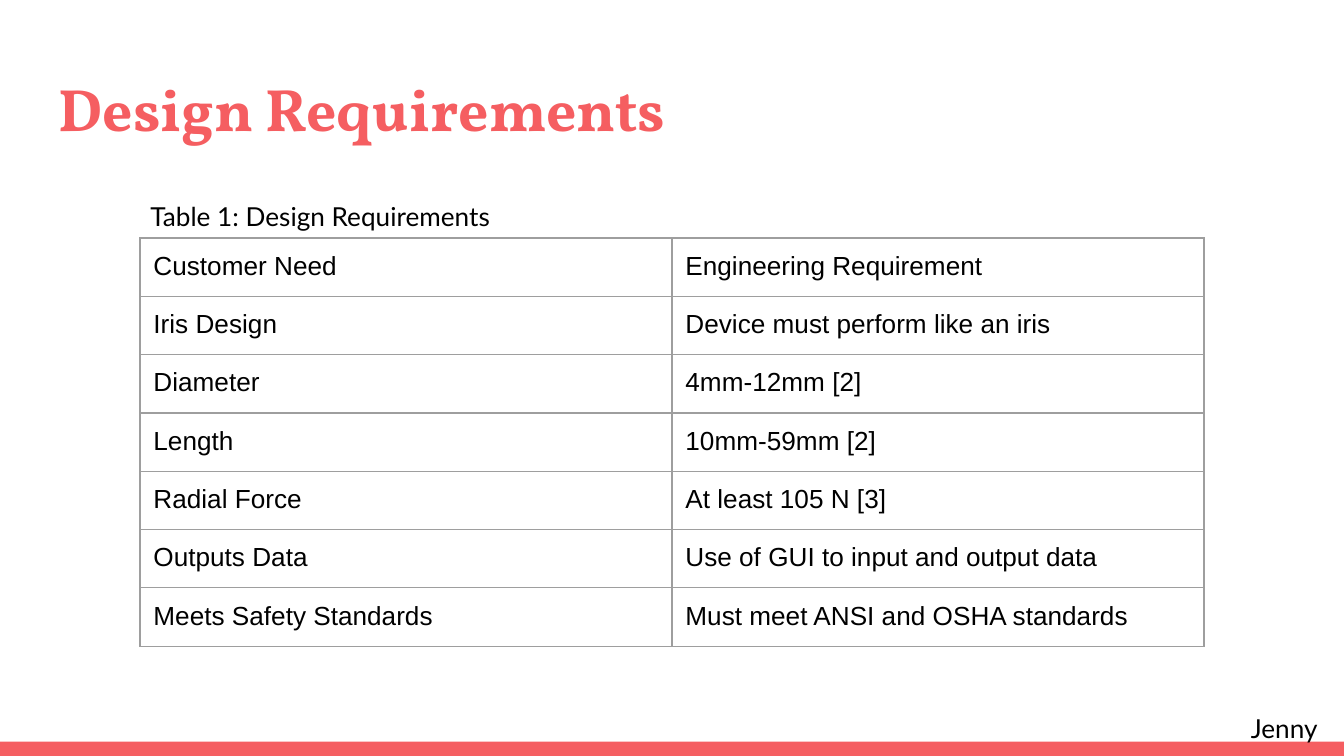
"""Build the Design Requirements slide with its table of customer needs."""
from dataclasses import dataclass

import lxml.etree
import pptx
import pptx.dml.color
import pptx.enum.shapes
import pptx.oxml.ns
import pptx.util

Pt = pptx.util.Pt


@dataclass(frozen=True)
class Theme:
    accent: str = "F55E61"
    text: str = "000000"
    border: str = "9E9E9E"
    title_font: str = "Vollkorn"
    body_font: str = "Lato"
    table_font: str = "Arial"
    title_size: int = 32
    body_size: int = 14
    border_width: float = 0.75
    inset: float = 7.2


THEME = Theme()
SLIDE_WIDTH, SLIDE_HEIGHT = 720, 405
BAR_HEIGHT = 7.6
COLUMN_WIDTH, ROW_HEIGHT = 285, 30.2
REQUIREMENTS = [
    ("Customer Need", "Engineering Requirement"),
    ("Iris Design", "Device must perform like an iris"),
    ("Diameter", "4mm-12mm [2]"),
    ("Length", "10mm-59mm [2]"),
    ("Radial Force", "At least 105 N [3]"),
    ("Outputs Data", "Use of GUI to input and output data"),
    ("Meets Safety Standards", "Must meet ANSI and OSHA standards"),
]


def rgb(color):
    return pptx.dml.color.RGBColor.from_string(color)


def set_margins(target):
    for side in ("left", "top", "right", "bottom"):
        setattr(target, f"margin_{side}", Pt(THEME.inset))


def write(text_frame, text, font_name, size, color, bold=False):
    text_frame.text = text
    font = text_frame.paragraphs[0].runs[0].font
    font.name, font.size, font.bold = font_name, Pt(size), bold
    font.color.rgb = rgb(color)


def add_bar(slide):
    bar = slide.shapes.add_shape(
        pptx.enum.shapes.MSO_SHAPE.RECTANGLE,
        Pt(0), Pt(SLIDE_HEIGHT - BAR_HEIGHT), Pt(SLIDE_WIDTH), Pt(BAR_HEIGHT))
    bar.shadow.inherit = False
    bar.fill.solid()
    bar.fill.fore_color.rgb = rgb(THEME.accent)
    bar.line.fill.background()


def add_text(slide, box, text, font_name=THEME.body_font,
             size=THEME.body_size, color=THEME.text, bold=False):
    text_frame = slide.shapes.add_textbox(*map(Pt, box)).text_frame
    text_frame.word_wrap = True
    set_margins(text_frame)
    write(text_frame, text, font_name, size, color, bold)


def add_borders(cell):
    properties = cell._tc.get_or_add_tcPr()
    qn = pptx.oxml.ns.qn
    for position, edge in enumerate(("lnL", "lnR", "lnT", "lnB")):
        line = lxml.etree.Element(qn(f"a:{edge}"), w=str(Pt(THEME.border_width)))
        fill = lxml.etree.SubElement(line, qn("a:solidFill"))
        lxml.etree.SubElement(fill, qn("a:srgbClr"), val=THEME.border)
        properties.insert(position, line)


def add_requirements_table(slide, left, top):
    row_count, column_count = len(REQUIREMENTS), len(REQUIREMENTS[0])
    table = slide.shapes.add_table(
        row_count, column_count, Pt(left), Pt(top),
        Pt(column_count * COLUMN_WIDTH), Pt(row_count * ROW_HEIGHT)).table
    table.first_row = table.horz_banding = False
    for row, texts in zip(table.rows, REQUIREMENTS):
        row.height = Pt(ROW_HEIGHT)
        for cell, text in zip(row.cells, texts):
            set_margins(cell)
            cell.fill.background()
            add_borders(cell)
            write(cell.text_frame, text, THEME.table_font,
                  THEME.body_size, THEME.text)


def main():
    presentation = pptx.Presentation()
    presentation.slide_width = Pt(SLIDE_WIDTH)
    presentation.slide_height = Pt(SLIDE_HEIGHT)
    slide = presentation.slides.add_slide(presentation.slide_layouts[6])
    add_bar(slide)
    add_text(slide, (24.5, 31, 671, 49), "Design Requirements",
             THEME.title_font, THEME.title_size, THEME.accent, bold=True)
    add_requirements_table(slide, 75, 127.5)
    add_text(slide, (663, 374.4, 57, 30.6), "Jenny")
    add_text(slide, (73.5, 100, 572.5, 24.5), "Table 1: Design Requirements")
    presentation.save("out.pptx")


if __name__ == "__main__":
    main()
